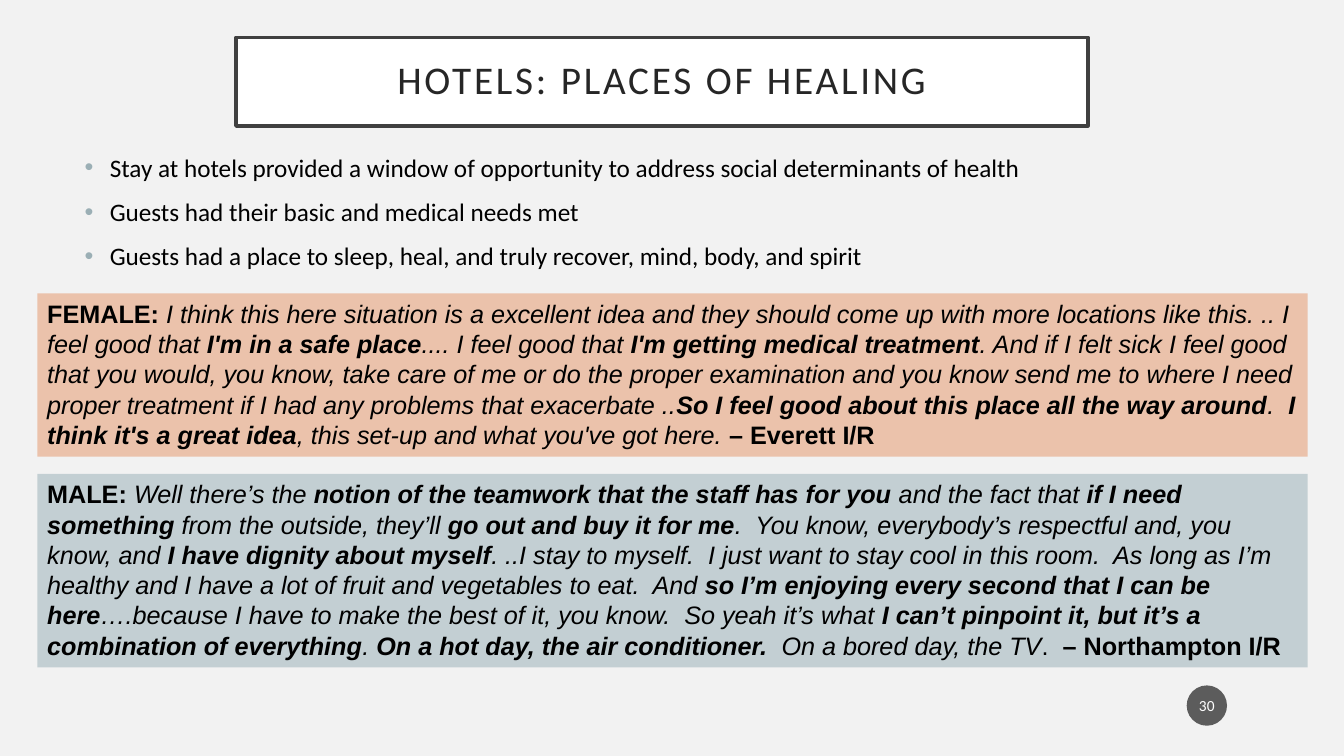
"""Build the slide on hotels as places of healing."""
from lxml.etree import SubElement
from pptx import Presentation
from pptx.dml.color import RGBColor
from pptx.enum.shapes import MSO_SHAPE as SHAPE
from pptx.enum.text import MSO_ANCHOR as ANCHOR, PP_ALIGN as ALIGN
from pptx.oxml.ns import qn
from pptx.util import Inches, Pt

TITLE = "HOTELS: PLACES OF HEALING"
BULLETS = [
    "Stay at hotels provided a window of opportunity to address social determinants of health",
    "Guests had their basic and medical needs met",
    "Guests had a place to sleep, heal, and truly recover, mind, body, and spirit",
]
FEMALE = [
    ("b", "FEMALE: "),
    ("i", "I think this here situation is a excellent idea and they should come up with more "
          "locations like this. .. I feel good that "),
    ("bi", "I'm in a safe place"),
    ("i", ".... I feel good that "),
    ("bi", "I'm getting medical treatment"),
    ("i", ". And if I felt sick I feel good that you would, you know, take care of me or do the "
          "proper examination and you know send me to where I need proper treatment if I had any "
          "problems that exacerbate .."),
    ("bi", "So I feel good about this place all the way around"),
    ("i", ".  "),
    ("bi", "I think it's a great idea"),
    ("i", ", this set-up and what you've got here. "),
    ("b", "– Everett I/R"),
]
MALE = [
    ("b", "MALE: "),
    ("i", "Well there’s the "),
    ("bi", "notion of the teamwork that the staff has for you "),
    ("i", "and the fact that "),
    ("bi", "if I need something "),
    ("i", "from the outside, they’ll "),
    ("bi", "go out and buy it for me"),
    ("i", ".  You know, everybody’s respectful and, you know, and "),
    ("bi", "I have dignity about myself"),
    ("i", ". ..I stay to myself.  I just want to stay cool in this room.  As long as I’m healthy "
          "and I have a lot of fruit and vegetables to eat.  And "),
    ("bi", "so I’m enjoying every second that I can be here"),
    ("i", "….because I have to make the best of it, you know.  So yeah it’s what "),
    ("bi", "I can’t pinpoint it, but it’s a combination of everything"),
    ("i", ". "),
    ("bi", "On a hot day, the air conditioner.  "),
    ("i", "On a bored day, the TV"),
    ("", ". "),
    ("b", " – Northampton I/R"),
]
QUOTES = [(2.91, 1.62, "EBC2AB", FEMALE), (4.7, 1.92, "C3CFD3", MALE)]
QUOTE_LEFT, QUOTE_WIDTH = 0.37, 12.6
PAGE = "30"


def rgb(value):
    return RGBColor.from_string(value)


def set_all(obj, **values):
    for name, value in values.items():
        setattr(obj, name, value)


def add_run(p, text, size, color, name="Calibri", **style):
    r = p.add_run()
    r.text = text
    set_all(r.font, size=Pt(size), name=name, **style)
    r.font.color.rgb = rgb(color)
    return r


def add_box(s, kind, at, fill, anchor=ANCHOR.TOP, inset=(0.1, 0.05)):
    sp = s.shapes.add_shape(kind, *map(Inches, at))
    sp.shadow.inherit = False
    sp.fill.solid()
    sp.fill.fore_color.rgb = rgb(fill)
    sp.line.fill.background()
    x, y = map(Inches, inset)
    set_all(sp.text_frame, word_wrap=True, vertical_anchor=anchor,
            margin_left=x, margin_right=x, margin_top=y, margin_bottom=y)
    return sp


def add_title(s):
    sp = add_box(s, SHAPE.RECTANGLE, (2.34, 0.37, 8.45, 0.88), "FFFFFF", ANCHOR.MIDDLE, (0.2, 0.2))
    sp.line.color.rgb = rgb("404040")
    sp.line.width = Pt(2.5)
    p = sp.text_frame.paragraphs[0]
    set_all(p, alignment=ALIGN.CENTER, line_spacing=0.9)
    r = add_run(p, TITLE, 28, "262626")
    r.font._element.set("spc", "200")


def add_bullets(s):
    tf = s.shapes.add_textbox(*map(Inches, (0.74, 1.46, 12.59, 1.41))).text_frame
    tf.word_wrap = True
    for i, text in enumerate(BULLETS):
        p = tf.add_paragraph() if i else tf.paragraphs[0]
        p.space_before = Pt(10 if i else 0)
        pPr = p._p.get_or_add_pPr()
        pPr.set("marL", str(Inches(0.25)))
        pPr.set("indent", str(-Inches(0.25)))
        color = SubElement(pPr, qn("a:buClr"))
        SubElement(color, qn("a:srgbClr"), val="9BAFB5")
        SubElement(pPr, qn("a:buFont"), typeface="Arial")
        SubElement(pPr, qn("a:buChar"), char="•")
        add_run(p, text, 18, "000000")


def add_quote(s, top, height, fill, runs):
    sp = add_box(s, SHAPE.RECTANGLE, (QUOTE_LEFT, top, QUOTE_WIDTH, height), fill)
    p = sp.text_frame.paragraphs[0]
    set_all(p, alignment=ALIGN.LEFT, line_spacing=Pt(21.6))
    for style, text in runs:
        add_run(p, text, 18, "000000", "Arial", bold="b" in style, italic="i" in style)


def add_page_number(s):
    sp = add_box(s, SHAPE.OVAL, (11.77, 6.8, 0.4, 0.4), "1D1D1D", ANCHOR.MIDDLE, (0.02, 0.05))
    color = sp._element.spPr.find(qn("a:solidFill")).find(qn("a:srgbClr"))
    SubElement(color, qn("a:alpha"), val="70000")
    p = sp.text_frame.paragraphs[0]
    p.alignment = ALIGN.CENTER
    add_run(p, PAGE, 11, "FFFFFF")


def main():
    prs = Presentation()
    set_all(prs, slide_width=Inches(13.33), slide_height=Inches(7.5))
    s = prs.slides.add_slide(prs.slide_layouts[6])
    s.background.fill.solid()
    s.background.fill.fore_color.rgb = rgb("F2F2F2")
    add_title(s)
    add_bullets(s)
    for quote in QUOTES:
        add_quote(s, *quote)
    add_page_number(s)
    prs.save("out.pptx")


if __name__ == "__main__":
    main()
